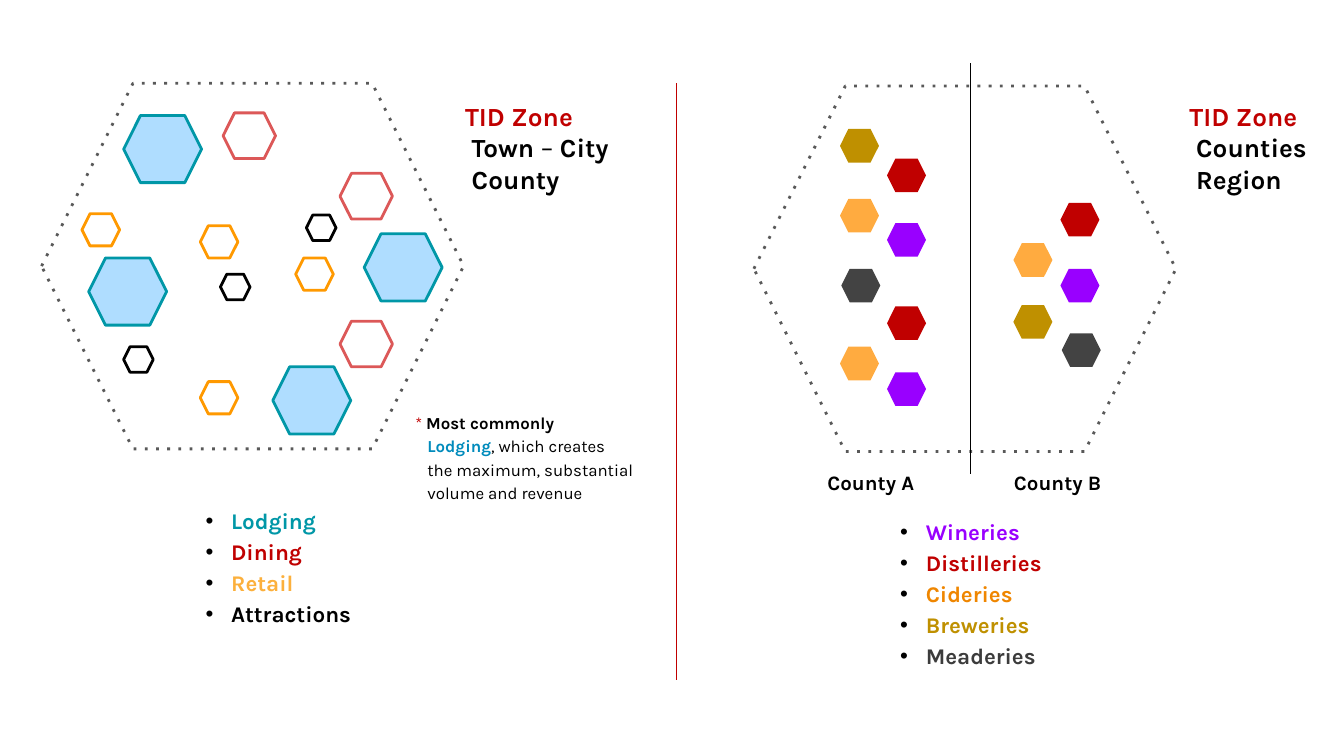
from dataclasses import dataclass
from typing import Optional

from lxml.etree import SubElement
from pptx import Presentation
from pptx.dml.color import RGBColor
from pptx.enum.shapes import MSO_CONNECTOR, MSO_SHAPE
from pptx.enum.text import MSO_AUTO_SIZE as AutoSize, PP_ALIGN as Align
from pptx.oxml.ns import qn
from pptx.util import Inches, Pt

CELL = 0.1  # inches
COLUMNS, ROWS = 100, 56.25


@dataclass(frozen=True)
class Theme:
    font: str = "Karla"
    heading: float = 14
    legend: float = 12
    label: float = 11
    note: float = 9
    outline: float = 1.5
    rule: float = 0.75
    black: str = "000000"
    white: str = "FFFFFF"
    red: str = "C00000"
    blue: str = "008BBC"
    sky: str = "AFDDFF"
    teal: str = "0097A7"
    coral: str = "DC5858"
    orange: str = "FF9900"
    deep_orange: str = "EF8600"
    amber: str = "FCB03C"
    apricot: str = "FFAB40"
    gold: str = "BF9000"
    purple: str = "9900FF"
    border: str = "595959"
    charcoal: str = "434343"
    dark: str = "3C3C3C"


THEME = Theme()


@dataclass(frozen=True)
class HexagonKind:
    width: float
    height: float
    fill: str
    line: Optional[str] = None
    dotted: bool = False


@dataclass(frozen=True)
class Run:
    text: str
    color: str = THEME.black
    bold: bool = True


@dataclass(frozen=True)
class Line:
    runs: tuple[Run, ...]
    indent: float = 0


@dataclass(frozen=True)
class TextBlock:
    box: tuple[float, float, float, float]
    size: float
    lines: tuple[Line, ...]
    insets: tuple[float, float] = (1.3, 0.7)
    spacing: Optional[float] = None
    bullets: bool = False
    centered: bool = False


def grid(cells: float) -> int:
    return Inches(cells * CELL)


def rgb(color: str) -> RGBColor:
    return RGBColor.from_string(color)


def draw_hexagon(shapes, kind: HexagonKind, column: float, row: float) -> None:
    shape = shapes.add_shape(MSO_SHAPE.HEXAGON, grid(column), grid(row),
                             grid(kind.width), grid(kind.height))
    shape.shadow.inherit = False
    shape.fill.solid()
    shape.fill.fore_color.rgb = rgb(kind.fill)
    if kind.line is None:
        shape.line.fill.background()
        return
    shape.line.color.rgb = rgb(kind.line)
    shape.line.width = Pt(THEME.outline)
    if kind.dotted:
        SubElement(shape.line._get_or_add_ln(), qn("a:prstDash"), val="dot")


def draw_vertical(shapes, column: float, top: float, bottom: float, color: str) -> None:
    line = shapes.add_connector(MSO_CONNECTOR.STRAIGHT, grid(column), grid(top),
                                grid(column), grid(bottom))
    line.line.color.rgb = rgb(color)
    line.line.width = Pt(THEME.rule)
    SubElement(line._element.spPr, qn("a:effectLst"))


def add_bullet(paragraph) -> None:
    properties = paragraph._p.get_or_add_pPr()
    properties.set("marL", str(Inches(0.19)))
    properties.set("indent", str(-Inches(0.19)))
    color = SubElement(properties, qn("a:buClr"))
    SubElement(color, qn("a:srgbClr"), val=THEME.black)
    SubElement(properties, qn("a:buFont"), typeface="Arial")
    SubElement(properties, qn("a:buChar"), char="•")


def draw_text(shapes, block: TextBlock) -> None:
    frame = shapes.add_textbox(*map(grid, block.box)).text_frame
    frame.word_wrap = True
    frame.auto_size = AutoSize.SHAPE_TO_FIT_TEXT
    frame.margin_left = frame.margin_right = grid(block.insets[0])
    frame.margin_top = frame.margin_bottom = grid(block.insets[1])
    for index, line in enumerate(block.lines):
        paragraph = frame.add_paragraph() if index else frame.paragraphs[0]
        if block.spacing:
            paragraph.line_spacing = block.spacing
        if block.centered:
            paragraph.alignment = Align.CENTER
        if block.bullets:
            add_bullet(paragraph)
        elif line.indent:
            paragraph._p.get_or_add_pPr().set("marL", str(grid(line.indent)))
        for part in line.runs:
            run = paragraph.add_run()
            run.text = part.text
            run.font.name = THEME.font
            run.font.size = Pt(block.size)
            run.font.bold = part.bold
            run.font.color.rgb = rgb(part.color)


def heading(column: float, width: float, *places: Line) -> TextBlock:
    title = Line((Run("TID Zone", THEME.red),))
    return TextBlock((column, 6.77, width, 8.4), THEME.heading, (title, *places))


def place(*runs: Run) -> Line:
    return Line(runs, 0.5)


def legend(box: tuple[float, float, float, float], insets: tuple[float, float],
           entries: dict[str, str]) -> TextBlock:
    lines = tuple(Line((Run(name, color),)) for name, color in entries.items())
    return TextBlock(box, THEME.legend, lines, insets, 1.15, bullets=True)


def county_label(name: str, column: float) -> TextBlock:
    return TextBlock((column, 34.5, 11, 3.4), THEME.label, (Line((Run(name),)),),
                     (1, 0.5), centered=True)


def producer(color: str) -> HexagonKind:
    return HexagonKind(2.9, 2.5, color)


ZONE = HexagonKind(31.4, 27.2, THEME.white, THEME.border, dotted=True)
TOWN = {
    HexagonKind(5.8, 5, THEME.sky, THEME.teal):
        [(9.2, 8.6), (6.6, 19.2), (27.1, 17.4), (20.3, 27.3)],
    HexagonKind(3.9, 3.4, THEME.white, THEME.coral):
        [(16.6, 8.4), (25.3, 23.9), (25.3, 12.9)],
    HexagonKind(2.8, 2.4, THEME.white, THEME.orange):
        [(14.9, 28.4), (14.9, 16.8), (6.1, 15.9), (22, 19.2)],
    HexagonKind(2.2, 1.9, THEME.white, THEME.black):
        [(9.2, 25.8), (22.8, 16), (16.4, 20.4)],
}
COUNTY_A = {
    producer(THEME.gold): [(62.5, 9.6)],
    producer(THEME.red): [(66, 11.8), (66, 22.8)],
    producer(THEME.apricot): [(62.5, 14.8), (62.5, 25.8)],
    producer(THEME.purple): [(66, 16.6), (66, 27.7)],
    producer(THEME.charcoal): [(62.6, 20)],
}
COUNTY_B = {
    producer(THEME.red): [(78.9, 15.1)],
    producer(THEME.apricot): [(75.4, 18.1)],
    producer(THEME.purple): [(78.9, 20)],
    producer(THEME.gold): [(75.4, 22.7)],
    producer(THEME.charcoal): [(79, 24.8)],
}
NOTE = TextBlock((29.6, 29.8, 19.5, 8.3), THEME.note, (
    Line((Run("* ", THEME.red, False), Run("Most commonly"))),
    Line((Run("Lodging", THEME.blue), Run(", which creates", bold=False)), 0.9),
    Line((Run("the maximum, substantial", bold=False),), 0.9),
    Line((Run("volume and revenue", bold=False),), 0.9),
), spacing=1.15)
TEXTS = [
    heading(33.3, 16.1, place(Run("Town "), Run("–", bold=False), Run(" City")),
            place(Run("County"))),
    heading(87.2, 12.4, place(Run("Counties")), place(Run("Region"))),
    NOTE,
    county_label("County A", 59.3),
    county_label("County B", 73.2),
    legend((14, 36.77, 18.3, 10.6), (1.3, 0.7), {
        "Lodging": THEME.teal, "Dining": THEME.red,
        "Retail": THEME.amber, "Attractions": THEME.black}),
    legend((66, 37.8, 19.4, 12.6), (1, 0.5), {
        "Wineries": THEME.purple, "Distilleries": THEME.red,
        "Cideries": THEME.deep_orange, "Breweries": THEME.gold,
        "Meaderies": THEME.dark}),
]


def main() -> None:
    presentation = Presentation()
    presentation.slide_width, presentation.slide_height = grid(COLUMNS), grid(ROWS)
    shapes = presentation.slides.add_slide(presentation.slide_layouts[6]).shapes
    draw_vertical(shapes, 50.33, 6.2, 50.6, THEME.red)
    for column, row, members in ((3.1, 6.2, [TOWN]), (56.1, 6.4, [COUNTY_A, COUNTY_B])):
        draw_hexagon(shapes, ZONE, column, row)
        for businesses in members:
            for kind, spots in businesses.items():
                for spot in spots:
                    draw_hexagon(shapes, kind, *spot)
    draw_vertical(shapes, 72.2, 4.7, 35.3, THEME.black)
    for block in TEXTS:
        draw_text(shapes, block)
    presentation.save("out.pptx")


if __name__ == "__main__":
    main()
